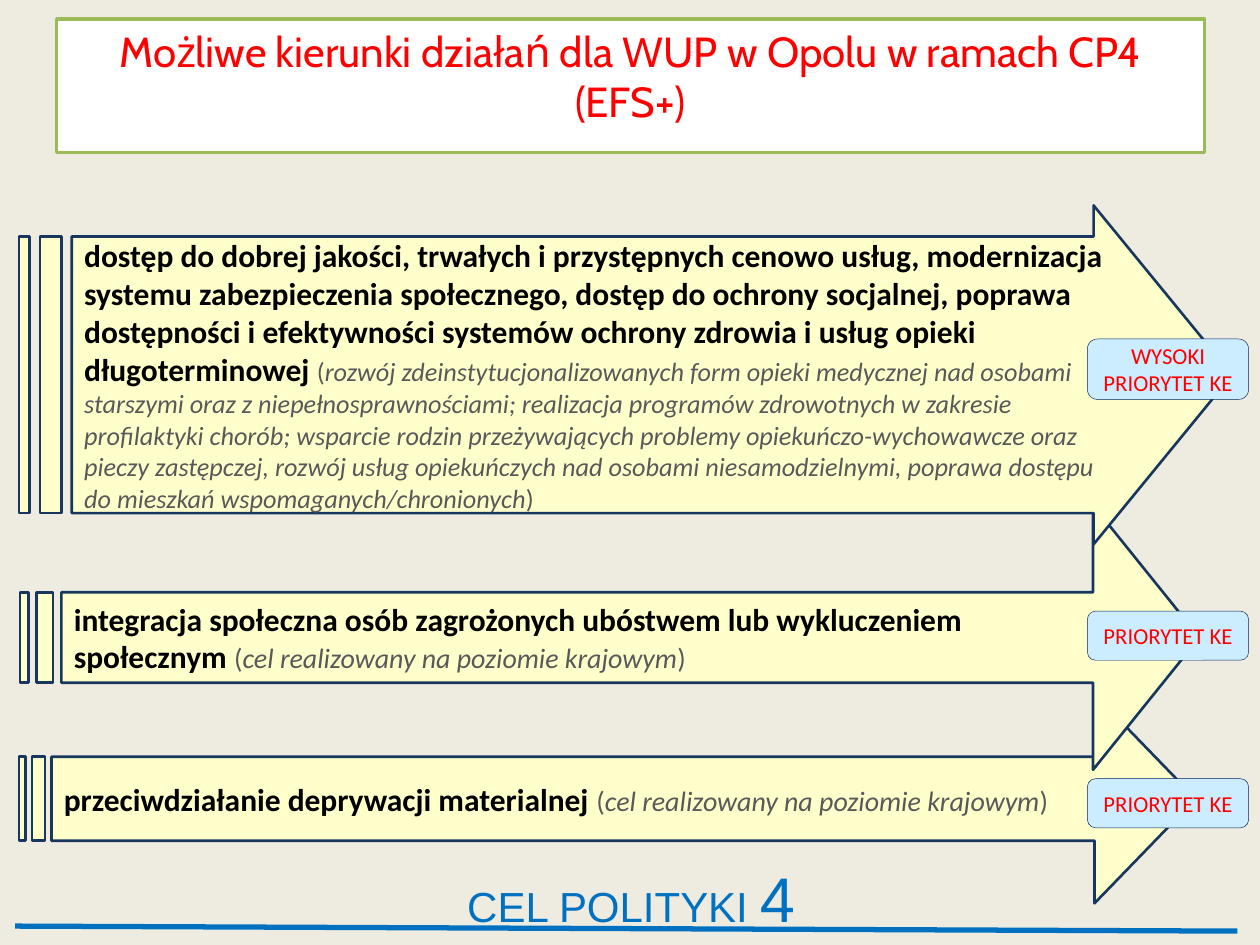
from dataclasses import dataclass

from lxml import etree
from pptx import Presentation
from pptx.dml.color import RGBColor
from pptx.enum.shapes import MSO_CONNECTOR, MSO_SHAPE
from pptx.enum.text import MSO_ANCHOR, PP_ALIGN
from pptx.oxml.ns import qn
from pptx.util import Inches, Pt

STRAIGHT = MSO_CONNECTOR.STRAIGHT
RECTANGLE = MSO_SHAPE.RECTANGLE
ROUNDED = MSO_SHAPE.ROUNDED_RECTANGLE
STRIPED_ARROW = MSO_SHAPE.STRIPED_RIGHT_ARROW
TOP, MIDDLE = MSO_ANCHOR.TOP, MSO_ANCHOR.MIDDLE
LEFT, CENTER = PP_ALIGN.LEFT, PP_ALIGN.CENTER

COLORS = {
    "background": "EEECE1",
    "policy": "0070C0",
    "arrow": "FFFFCC",
    "arrow_line": "17375E",
    "goal": "000000",
    "detail": "595959",
    "badge": "CCECFF",
    "badge_line": "002060",
    "red": "FF0000",
    "title": "FFFFFF",
    "title_line": "9BBB59",
}
BODY_FONT = "Calibri"
BADGE_LEFT, BADGE_WIDTH = 8.63, 1.28


@dataclass
class Box:
    left: float
    top: float
    width: float
    height: float


@dataclass
class Direction:
    box: Box
    adjustments: tuple[float, float]
    goal: str
    detail: str
    detail_size: int


@dataclass
class Badge:
    top: float
    height: float
    label: str


DIRECTIONS = [
    Direction(
        Box(0.15, 5.51, 9.34, 1.66), (0.402, 0.484),
        "przeciwdziałanie deprywacji materialnej ",
        "cel realizowany na poziomie krajowym", 16,
    ),
    Direction(
        Box(0.16, 4.01, 9.36, 2.1), (0.342, 0.402),
        "integracja społeczna osób zagrożonych ubóstwem lub wykluczeniem \nspołecznym ",
        "cel realizowany na poziomie krajowym", 16,
    ),
    Direction(
        Box(0.15, 1.63, 9.63, 2.69), (0.816, 0.409),
        "dostęp do dobrej jakości, trwałych i przystępnych cenowo usług, modernizacja "
        "systemu zabezpieczenia społecznego, dostęp do ochrony socjalnej, poprawa "
        "dostępności i efektywności systemów ochrony zdrowia i usług opieki "
        "długoterminowej ",
        "rozwój zdeinstytucjonalizowanych form opieki medycznej nad osobami "
        "starszymi oraz z niepełnosprawnościami; realizacja programów zdrowotnych w "
        "zakresie profilaktyki chorób; wsparcie rodzin przeżywających problemy "
        "opiekuńczo-wychowawcze oraz pieczy zastępczej, rozwój usług opiekuńczych nad "
        "osobami niesamodzielnymi, poprawa dostępu do mieszkań "
        "wspomaganych/chronionych", 15,
    ),
]
BADGES = [
    Badge(4.85, 0.39, "PRIORYTET KE"),
    Badge(2.69, 0.48, "WYSOKI PRIORYTET KE"),
    Badge(6.18, 0.39, "PRIORYTET KE"),
]


def rgb(name: str) -> RGBColor:
    return RGBColor.from_string(COLORS[name])


def add_text(paragraph, text: str, font: str, size: int, color: str,
             bold: bool = False, italic: bool = False) -> None:
    """Append formatted text, with a line break at each newline."""
    for index, line in enumerate(text.split("\n")):
        if index:
            paragraph.add_line_break()
        run = paragraph.add_run()
        run.text = line
        run.font.name = font
        run.font.size = Pt(size)
        run.font.color.rgb = rgb(color)
        run.font.bold = bold
        run.font.italic = italic


def add_panel(slide, preset, box: Box, fill: str, line: str, line_width: float,
              anchor=MIDDLE, alignment=CENTER):
    panel = slide.shapes.add_shape(
        preset, Inches(box.left), Inches(box.top), Inches(box.width), Inches(box.height))
    panel.shadow.inherit = False
    panel.fill.solid()
    panel.fill.fore_color.rgb = rgb(fill)
    panel.line.color.rgb = rgb(line)
    panel.line.width = Pt(line_width)
    panel.text_frame.word_wrap = True
    panel.text_frame.vertical_anchor = anchor
    panel.text_frame.paragraphs[0].alignment = alignment
    return panel


def add_direction(slide, direction: Direction) -> None:
    arrow = add_panel(slide, STRIPED_ARROW, direction.box, "arrow", "arrow_line", 1.5,
                      alignment=LEFT)
    for index, value in enumerate(direction.adjustments):
        arrow.adjustments[index] = value
    paragraph = arrow.text_frame.paragraphs[0]
    add_text(paragraph, direction.goal, BODY_FONT, 18, "goal", bold=True)
    for text, italic in (("(", False), (direction.detail, True), (")", False)):
        add_text(paragraph, text, BODY_FONT, direction.detail_size, "detail", italic=italic)


def add_badge(slide, badge: Badge) -> None:
    box = Box(BADGE_LEFT, badge.top, BADGE_WIDTH, badge.height)
    panel = add_panel(slide, ROUNDED, box, "badge", "badge_line", 0.25)
    panel.text_frame.margin_left = panel.text_frame.margin_right = Inches(0.05)
    add_text(panel.text_frame.paragraphs[0], badge.label, BODY_FONT, 13, "red")


def add_policy_footer(slide) -> None:
    rule = slide.shapes.add_connector(
        STRAIGHT, Inches(0.12), Inches(7.35), Inches(9.82), Inches(7.39))
    rule.line.color.rgb = rgb("policy")
    rule.line.width = Pt(3)
    etree.SubElement(rule._element.spPr, qn("a:effectLst"))

    policy = slide.shapes.add_textbox(
        Inches(3.61), Inches(6.77), Inches(3.35), Inches(0.71))
    policy.text_frame.word_wrap = True
    paragraph = policy.text_frame.paragraphs[0]
    add_text(paragraph, "CEL POLITYKI ", "Arial", 24, "policy")
    add_text(paragraph, "4", "Arial", 36, "policy")


def add_title(slide) -> None:
    title = add_panel(slide, RECTANGLE, Box(0.45, 0.15, 9.11, 1.06),
                      "title", "title_line", 2, anchor=TOP)
    add_text(title.text_frame.paragraphs[0],
             "Możliwe kierunki działań dla WUP w Opolu w ramach CP4 (EFS+)",
             "Cabin", 24, "red")


def main() -> None:
    presentation = Presentation()
    presentation.slide_width = Inches(10)
    presentation.slide_height = Inches(7.5)
    slide = presentation.slides.add_slide(presentation.slide_layouts[6])
    slide.background.fill.solid()
    slide.background.fill.fore_color.rgb = rgb("background")

    add_policy_footer(slide)
    for direction in DIRECTIONS:
        add_direction(slide, direction)
    for badge in BADGES:
        add_badge(slide, badge)
    add_title(slide)
    presentation.save("out.pptx")


if __name__ == "__main__":
    main()
